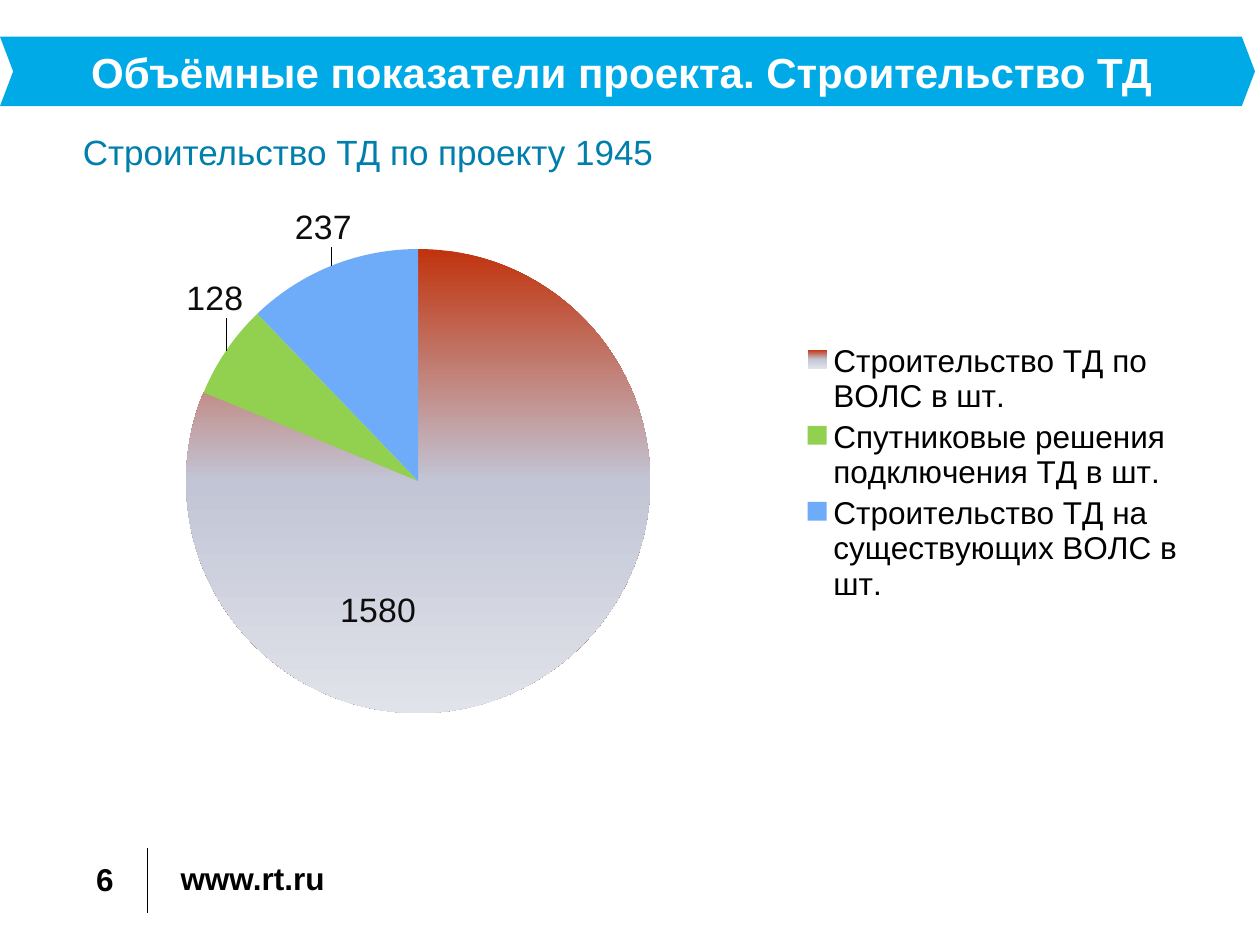
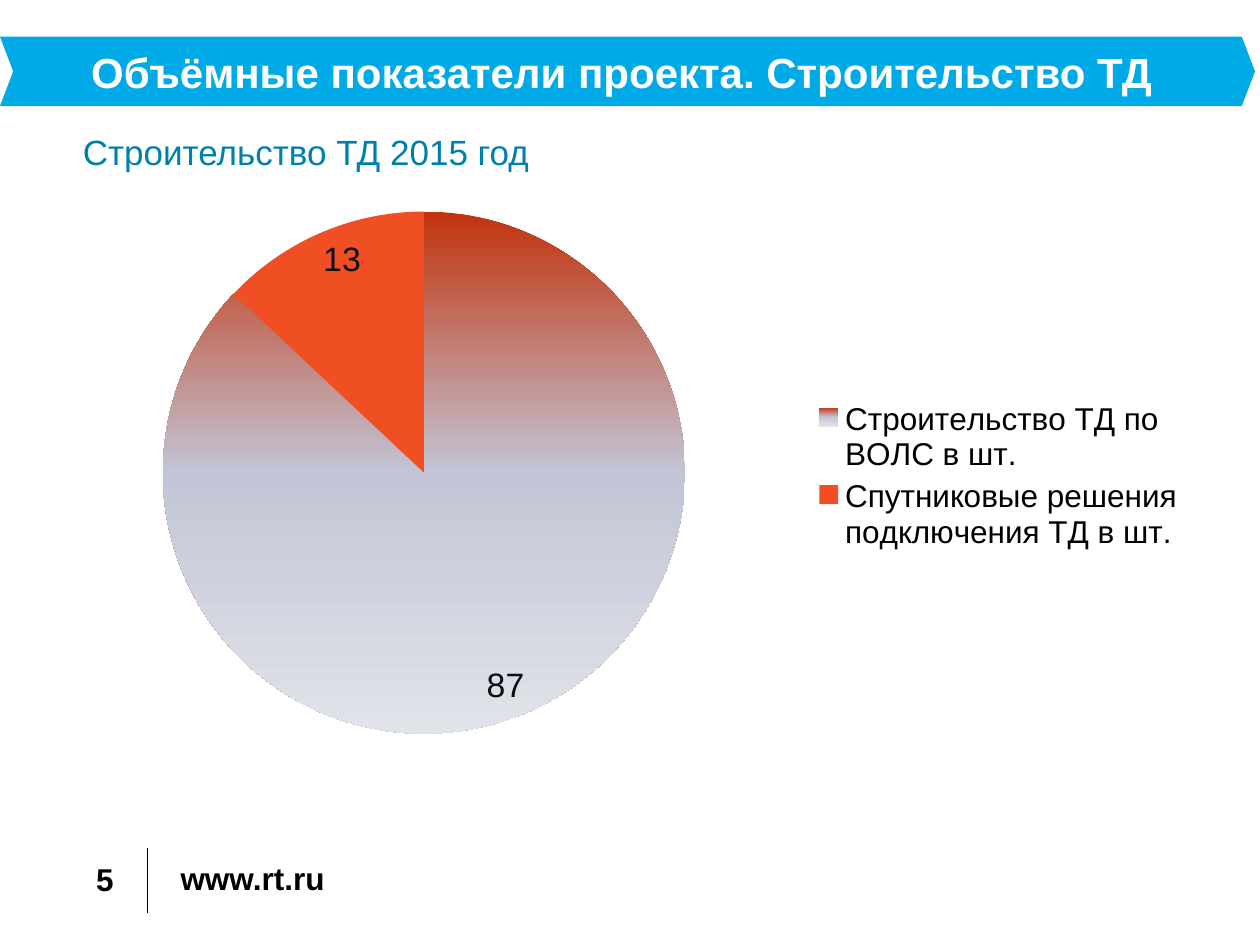
"""Build two slides with pie charts on the construction volumes of a project."""
from dataclasses import dataclass

from lxml import etree
from pptx import Presentation
from pptx.chart.data import CategoryChartData
from pptx.dml.color import RGBColor
from pptx.enum.chart import XL_CHART_TYPE, XL_LABEL_POSITION, XL_LEGEND_POSITION
from pptx.enum.shapes import MSO_CONNECTOR, MSO_SHAPE
from pptx.enum.text import MSO_ANCHOR, PP_ALIGN
from pptx.oxml.ns import qn
from pptx.util import Cm, Pt

PIE = XL_CHART_TYPE.PIE
LEGEND_RIGHT = XL_LEGEND_POSITION.RIGHT
CENTER_LABEL = XL_LABEL_POSITION.CENTER
INSIDE_LABEL = XL_LABEL_POSITION.INSIDE_END
OUTSIDE_LABEL = XL_LABEL_POSITION.OUTSIDE_END
CHEVRON = MSO_SHAPE.CHEVRON
STRAIGHT = MSO_CONNECTOR.STRAIGHT
TOP, MIDDLE = MSO_ANCHOR.TOP, MSO_ANCHOR.MIDDLE
LEFT, CENTER, RIGHT = PP_ALIGN.LEFT, PP_ALIGN.CENTER, PP_ALIGN.RIGHT


@dataclass(frozen=True)
class Theme:
    """Colours, font and type sizes of the deck."""
    font: str = "Arial"
    band: str = "00AAE7"
    heading: str = "007FAD"
    white: str = "FFFFFF"
    black: str = "000000"
    label: str = "0D0D0D"
    green: str = "92D050"
    blue: str = "6EABF8"
    orange: str = "F04E23"
    gradient: tuple = ((0, "C1330D"), (50, "C2C5D5"), (100, "E1E3EA"))
    band_size: float = 24
    heading_size: float = 20
    body_size: float = 18
    label_size: float = 19.3


THEME = Theme()
BAND_TITLE = "Объёмные показатели проекта. Строительство ТД "
SITE = "www.rt.ru"
FIBRE = "Строительство ТД по ВОЛС в шт."
SATELLITE = "Спутниковые решения подключения ТД в шт."
EXISTING = "Строительство ТД на существующих ВОЛС в шт."

SLIDES = [
    {
        "number": "6",
        "heading": "Строительство ТД по проекту 1945",
        "values": {FIBRE: 1580, SATELLITE: 128, EXISTING: 237},
        "colors": [None, THEME.green, THEME.blue],
        "labels": [(CENTER_LABEL, (-0.09, 0.06)),
                   (OUTSIDE_LABEL, (0.02, -0.05)),
                   (OUTSIDE_LABEL, (0.02, -0.02))],
        "plot_box": (0.13, 0.1, 0.4, 0.83),
        "legend_box": (0.66, 0.26, 0.33, 0.48),
    },
    {
        "number": "5",
        "heading": "Строительство ТД 2015 год",
        "values": {FIBRE: 87, SATELLITE: 13},
        "colors": [None, THEME.orange],
        "labels": [(INSIDE_LABEL, None), (INSIDE_LABEL, None)],
        "plot_box": (0.11, 0.03, 0.45, 0.94),
        "legend_box": (0.67, 0.36, 0.32, 0.29),
    },
]


def child(parent, tag, **attributes):
    """Append an element with the given attributes and return it."""
    return etree.SubElement(parent, qn(tag), {k: str(v) for k, v in attributes.items()})


def manual_layout(parent, index, box, edge=True, inner=False):
    """Place a chart part by fractions of the chart."""
    for old in parent.findall(qn("c:layout")):
        parent.remove(old)
    layout = etree.Element(qn("c:layout"))
    manual = child(layout, "c:manualLayout")
    if inner:
        child(manual, "c:layoutTarget", val="inner")
    if edge:
        child(manual, "c:xMode", val="edge")
        child(manual, "c:yMode", val="edge")
    for key, value in zip("xywh", box):
        child(manual, f"c:{key}", val=value)
    parent.insert(index, layout)


class Deck:
    """Holds the theme, the presentation and the current slide."""

    def __init__(self, theme):
        """Start an empty presentation."""
        self.theme = theme
        self.prs = Presentation()
        self.prs.slide_width, self.prs.slide_height = Cm(25.4), Cm(19.05)
        self.s = None

    def add_slide(self):
        """Add a blank slide with a plain background."""
        self.s = self.prs.slides.add_slide(self.prs.slide_layouts[6])
        self.paint(self.s.background.fill, self.theme.white)

    def paint(self, fill, color):
        """Set a solid fill."""
        fill.solid()
        fill.fore_color.rgb = RGBColor.from_string(color)

    def style(self, font, size, color, bold=False):
        """Set face, size, colour and weight of a font."""
        font.name, font.size, font.bold = self.theme.font, Pt(size), bold
        font.color.rgb = RGBColor.from_string(color)

    def add_text(self, sp, text, size, color, bold=False, align=LEFT, anchor=TOP):
        """Put one run into a shape and return its text frame."""
        tf = sp.text_frame
        tf.word_wrap, tf.vertical_anchor = True, anchor
        p = tf.paragraphs[0]
        p.alignment = align
        r = p.add_run()
        r.text = text
        self.style(r.font, size, color, bold)
        return tf

    def band(self, text):
        """Draw the title band."""
        sp = self.s.shapes.add_shape(CHEVRON, Cm(0), Cm(0.74), Cm(25.3), Cm(1.4))
        sp.adjustments[0] = 0.19
        sp.shadow.inherit = False
        self.paint(sp.fill, self.theme.band)
        sp.line.fill.background()
        self.add_text(sp, text, self.theme.band_size, self.theme.white, True, CENTER, MIDDLE)

    def heading(self, text):
        """Put the heading above the chart."""
        sp = self.s.shapes.add_textbox(Cm(1.42), Cm(2.51), Cm(14.07), Cm(2.36))
        self.add_text(sp, text, self.theme.heading_size, self.theme.heading)

    def footer_text(self, text, box, align=LEFT, anchor=TOP):
        """Put a bold footer text without insets."""
        sp = self.s.shapes.add_textbox(*map(Cm, box))
        tf = self.add_text(sp, text, self.theme.body_size, self.theme.black, True, align, anchor)
        tf.margin_left = tf.margin_top = tf.margin_right = tf.margin_bottom = 0

    def footer(self, number):
        """Draw the page number, the divider and the site address."""
        line = self.s.shapes.add_connector(STRAIGHT, Cm(2.97), Cm(17.1), Cm(2.97), Cm(18.4))
        line.line.width = Pt(0.5)
        line.line.color.rgb = RGBColor.from_string(self.theme.black)
        child(line._element.spPr, "a:effectLst")
        self.footer_text(SITE, (3.64, 17.32, 4.8, 0.76))
        self.footer_text(number, (0.69, 17.2, 1.6, 1.02), RIGHT, MIDDLE)

    def fill_slice(self, series, point, color):
        """Fill a slice with a colour, or with the theme gradient for None."""
        point.format.line.fill.background()
        fill = point.format.fill
        if color:
            self.paint(fill, color)
            return
        fill.gradient()
        grad = next(series._element.iter(qn("a:gradFill")))
        for old in list(grad):
            grad.remove(old)
        stops = child(grad, "a:gsLst")
        for percent, stop_color in self.theme.gradient:
            child(child(stops, "a:gs", pos=percent * 1000), "a:srgbClr", val=stop_color)
        child(grad, "a:lin", ang=90 * 60000, scaled=0)

    def pie(self, values, colors, labels, plot_box, legend_box):
        """Add a pie chart with value labels and a legend on the right."""
        data = CategoryChartData()
        data.categories = list(values)
        data.add_series("Series 1", list(values.values()))
        chart = self.s.shapes.add_chart(
            PIE, Cm(0.71), Cm(3.89), Cm(23.39), Cm(11.28), data).chart
        self.style(chart.font, self.theme.body_size, self.theme.black)
        chart.has_title = False
        chart.has_legend = True
        chart.legend.position = LEGEND_RIGHT
        chart.legend.include_in_layout = False
        plot = chart.plots[0]
        plot.vary_by_categories = True
        plot.has_data_labels = True
        plot.data_labels.show_value = True
        plot.data_labels.show_percentage = False
        self.style(plot.data_labels.font, self.theme.label_size, self.theme.label)

        series = plot.series[0]
        for i, (color, (position, _)) in enumerate(zip(colors, labels)):
            point = series.points[i]
            self.fill_slice(series, point, color)
            self.style(point.data_label.font, self.theme.label_size, self.theme.label)
            point.data_label.position = position
        for label, (_, offset) in zip(list(series._element.iter(qn("c:dLbl"))), labels):
            if offset:
                manual_layout(label, 1, offset, edge=False)
        manual_layout(chart.legend._element, 1, legend_box)
        area = next(chart._chartSpace.iter(qn("c:plotArea")))
        manual_layout(area, 0, plot_box, inner=True)

    def save(self):
        """Save the presentation."""
        self.prs.save("out.pptx")


def main():
    """Build and save the slides."""
    deck = Deck(THEME)
    for page in SLIDES:
        deck.add_slide()
        deck.band(BAND_TITLE)
        deck.pie(page["values"], page["colors"], page["labels"],
                 page["plot_box"], page["legend_box"])
        deck.heading(page["heading"])
        deck.footer(page["number"])
    deck.save()


if __name__ == "__main__":
    main()
